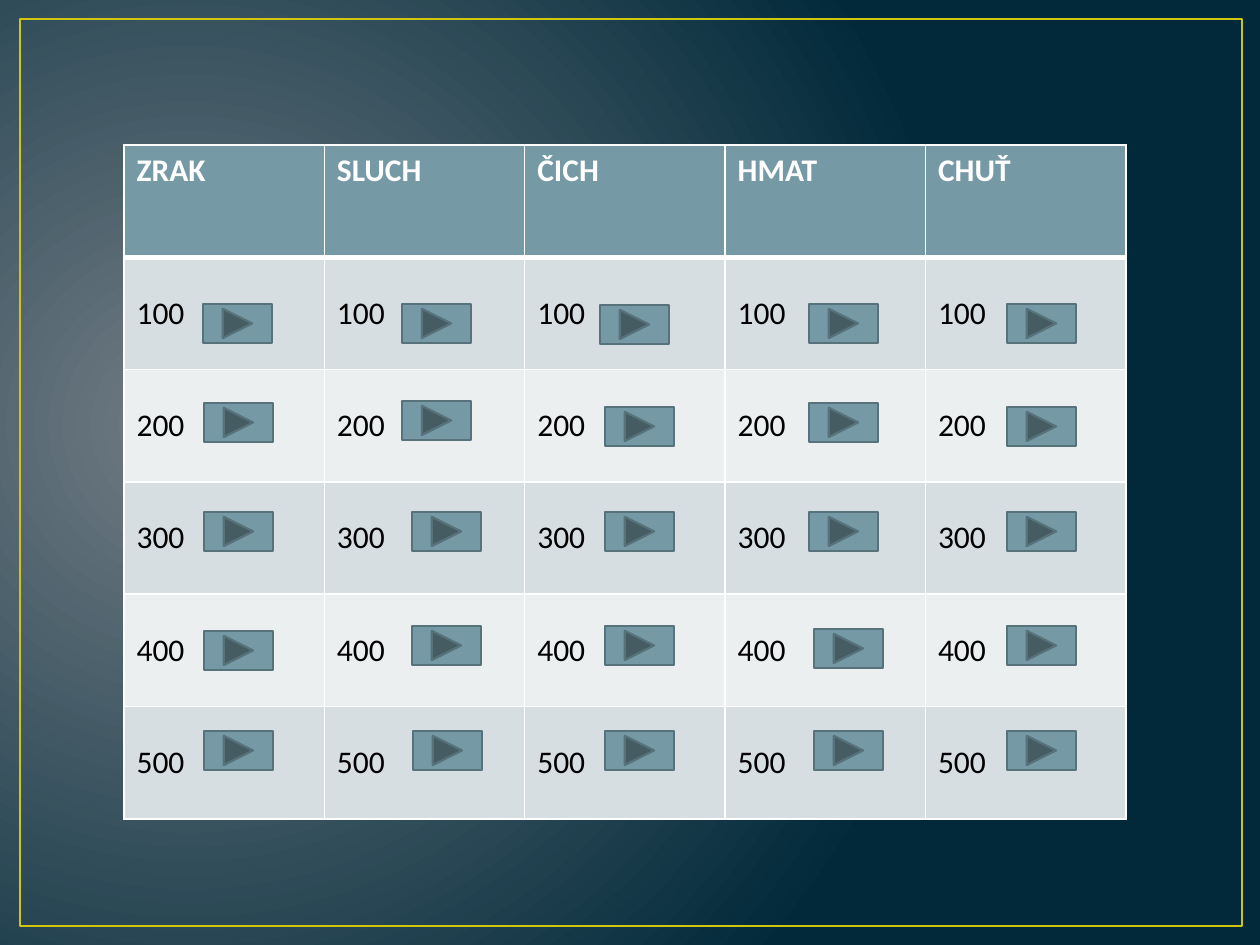
import pptx
import pptx.util
import pptx.dml.color
import pptx.enum.shapes
import pptx.enum.text
import pptx.oxml
import pptx.oxml.ns
from dataclasses import dataclass

PX = 914400 // 126
KIND = pptx.enum.shapes.MSO_SHAPE
ANCHOR = pptx.enum.text.MSO_ANCHOR
NS = pptx.oxml.ns.nsdecls("a")


@dataclass(frozen=True)
class Theme:
    glow: str = "717C84"
    night: str = "01293A"
    frame: str = "CFC60D"
    teal: str = "759AA5"
    edge: str = "57727A"
    bands: tuple = ("D6DEE1", "ECEFF0")
    white: str = "FFFFFF"
    black: str = "000000"
    font: str = "Calibri"
    size: int = 18
    rule: int = 1
    thick: int = 3


LOOK = Theme()
HEADS = ("ZRAK", "SLUCH", "ČICH", "HMAT", "CHUŤ")
POINTS = ("100", "200", "300", "400", "500")
LEFTS = (80, 288, 481, 685, 883)
TOPS = (159, 258, 367, 481, 586)
NUDGES = {
    (0, 0): (-1, 0), (0, 3): (0, 5),
    (1, 0): (-10, 0), (1, 1): (-10, -2), (1, 4): (1, 0),
    (2, 0): (-5, 1), (2, 1): (0, 4),
    (3, 3): (5, 3), (3, 4): (5, 0), (4, 1): (0, 4),
}


def color(code):
    return pptx.dml.color.RGBColor.from_string(code)


def apply(item, **values):
    for name, value in values.items():
        setattr(item, name, value)


def shade(slide):
    fill = slide.background.fill
    fill.gradient()
    for stop, code, place in zip(fill.gradient_stops, (LOOK.glow, LOOK.night), (0, 1)):
        stop.color.rgb = color(code)
        stop.position = place
    grad = slide.element.find(".//" + pptx.oxml.ns.qn("a:gradFill"))
    line = grad.find(pptx.oxml.ns.qn("a:lin"))
    grad.replace(line, pptx.oxml.parse_xml(
        f'<a:path {NS} path="circle">'
        '<a:fillToRect l="15000" t="50000" r="85000" b="60000"/></a:path>'))


def draw(slide, kind, box, edge, width, fill=None):
    shape = slide.shapes.add_shape(kind, *(v * PX for v in box))
    shape.shadow.inherit = False
    if fill:
        shape.fill.solid()
        shape.fill.fore_color.rgb = color(fill)
    else:
        shape.fill.background()
    shape.line.color.rgb = color(edge)
    shape.line.width = pptx.util.Pt(width)


def rule(cell, head):
    props = cell._tc.get_or_add_tcPr()
    for spot, side in enumerate("LRTB"):
        width = LOOK.thick if head and side == "B" else LOOK.rule
        props.insert(spot, pptx.oxml.parse_xml(
            f'<a:ln{side} {NS} w="{pptx.util.Pt(width)}"><a:solidFill>'
            f'<a:srgbClr val="{LOOK.white}"/></a:solidFill></a:ln{side}>'))


def style(cell, text, row):
    head = row == 0
    cell.text = text
    cell.vertical_anchor = ANCHOR.TOP if head else ANCHOR.MIDDLE
    cell.fill.solid()
    cell.fill.fore_color.rgb = color(LOOK.teal if head else LOOK.bands[(row - 1) % 2])
    font = cell.text_frame.paragraphs[0].runs[0].font
    apply(font, name=LOOK.font, size=pptx.util.Pt(LOOK.size), bold=head)
    font.color.rgb = color(LOOK.white if head else LOOK.black)
    rule(cell, head)


def board(slide, box):
    rows = [HEADS] + [[mark] * len(HEADS) for mark in POINTS]
    left, top, wide, high = (v * PX for v in box)
    table = slide.shapes.add_table(len(rows), len(HEADS), left, top, wide, high).table
    for col in table.columns:
        col.width = wide // len(HEADS)
    for row, texts in enumerate(rows):
        table.rows[row].height = high // len(rows)
        for col, text in enumerate(texts):
            style(table.cell(row, col), text, row)


def buttons(slide, box):
    for col, left in enumerate(LEFTS):
        for row, top in enumerate(TOPS):
            dx, dy = NUDGES.get((col, row), (0, 0))
            spot = (box[0] + left + dx, box[1] + top + dy, 69, 39)
            draw(slide, KIND.ACTION_BUTTON_FORWARD_OR_NEXT, spot, LOOK.edge, 1.25, LOOK.teal)


def main():
    deck = pptx.Presentation()
    apply(deck, slide_width=pptx.util.Inches(10), slide_height=pptx.util.Inches(7.5))
    slide = deck.slides.add_slide(deck.slide_layouts[6])
    grid = (124, 145, 1002, 674)
    shade(slide)
    draw(slide, KIND.RECTANGLE, (20, 19, 1222, 907), LOOK.frame, 1.5)
    board(slide, grid)
    buttons(slide, grid)
    deck.save("out.pptx")


if __name__ == "__main__":
    main()
